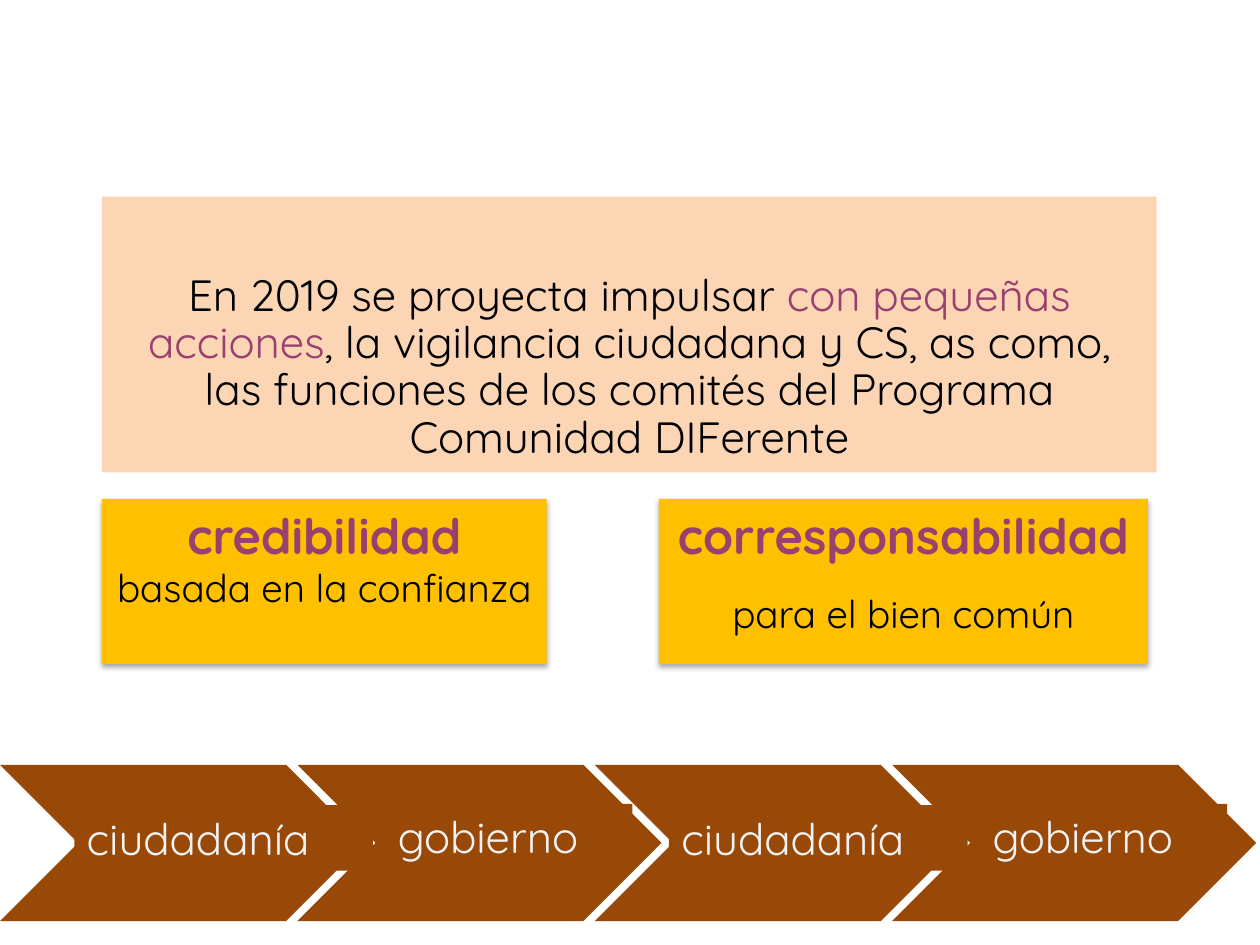
from lxml import etree
from pptx import Presentation
from pptx.dml.color import RGBColor
from pptx.enum.shapes import MSO_SHAPE
from pptx.enum.text import MSO_ANCHOR, PP_ALIGN
from pptx.oxml import parse_xml
from pptx.oxml.ns import nsdecls
from pptx.util import Inches, Pt

RECTANGLE = MSO_SHAPE.RECTANGLE
CHEVRON = MSO_SHAPE.CHEVRON
TOP = MSO_ANCHOR.TOP
BOTTOM = MSO_ANCHOR.BOTTOM
CENTER = PP_ALIGN.CENTER
LEFT = PP_ALIGN.LEFT

PEACH = RGBColor(0xFC, 0xD5, 0xB5)
YELLOW = RGBColor(0xFF, 0xC0, 0x00)
BROWN = RGBColor(0x98, 0x48, 0x07)
PLUM = RGBColor(0x98, 0x40, 0x6E)
BLACK = RGBColor(0x00, 0x00, 0x00)
PALE = RGBColor(0xF2, 0xF2, 0xF2)

FONT = "Quicksand"
CHEVRON_STEP = 2.36


def add_block(slide, preset, left, top, width, height, color):
    shape = slide.shapes.add_shape(
        preset, Inches(left), Inches(top), Inches(width), Inches(height)
    )
    shape.shadow.inherit = False
    shape.fill.solid()
    shape.fill.fore_color.rgb = color
    shape.line.fill.background()
    shape.text_frame.word_wrap = True
    shape.text_frame.vertical_anchor = TOP
    return shape


def add_run(paragraph, text, size, color, bold=False):
    run = paragraph.add_run()
    run.text = text
    run.font.name = FONT
    run.font.size = Pt(size)
    run.font.bold = bold
    run.font.color.rgb = color


def add_soft_shadow(shape):
    effects = shape._element.spPr.find("{*}effectLst")
    shadow = parse_xml(
        f'<a:outerShdw {nsdecls("a")} blurRad="{Pt(3.1)}" dist="{Pt(1.8)}" '
        'dir="5400000" rotWithShape="0"/>'
    )
    color = etree.SubElement(shadow, shadow.tag.replace("outerShdw", "srgbClr"), val="000000")
    etree.SubElement(color, shadow.tag.replace("outerShdw", "alpha"), val="35000")
    effects.append(shadow)


def add_statement(slide):
    panel = add_block(slide, RECTANGLE, 0.81, 1.56, 8.37, 2.19, PEACH)
    panel.text_frame.vertical_anchor = BOTTOM
    panel.text_frame.margin_bottom = Inches(0.08)
    paragraph = panel.text_frame.paragraphs[0]
    paragraph.alignment = CENTER
    paragraph.line_spacing = 0.9
    add_run(paragraph, "En 2019 se proyecta impulsar ", 25, BLACK)
    add_run(paragraph, "con pequeñas acciones", 25, PLUM)
    add_run(
        paragraph,
        ", la vigilancia ciudadana y CS, as como, las funciones de los comités "
        "del Programa Comunidad DIFerente",
        25,
        BLACK,
    )


def add_value_card(slide, left, width, heading, detail, gap):
    card = add_block(slide, RECTANGLE, left, 3.96, width, 1.31, YELLOW)
    add_soft_shadow(card)
    title = card.text_frame.paragraphs[0]
    title.alignment = CENTER
    add_run(title, heading, 28, PLUM, bold=True)
    body = card.text_frame.add_paragraph()
    body.alignment = CENTER
    body.space_before = Pt(gap)
    add_run(body, detail, 22, BLACK)


def add_chevron_step(slide, left, text, label_offset, label_top, label_width):
    add_block(slide, CHEVRON, left, 6.07, 2.89, 1.24, BROWN)
    label = add_block(
        slide, RECTANGLE, left + label_offset, label_top, label_width, 0.52, BROWN
    )
    paragraph = label.text_frame.paragraphs[0]
    paragraph.alignment = LEFT
    add_run(paragraph, text, 25, PALE)


def main():
    presentation = Presentation()
    presentation.slide_width = Inches(10)
    presentation.slide_height = Inches(7.5)
    slide = presentation.slides.add_slide(presentation.slide_layouts[6])

    add_statement(slide)
    add_value_card(slide, 5.23, 3.88, "corresponsabilidad", "para el bien común", 15)
    add_value_card(slide, 0.81, 3.53, "credibilidad", "basada en la confianza", 0)

    citizens = ("ciudadanía", 0.59, 6.39, 2.37)
    government = ("gobierno", 0.7, 6.38, 1.96)
    steps = [citizens, government] * 2
    for index in reversed(range(len(steps))):
        add_chevron_step(slide, index * CHEVRON_STEP, *steps[index])

    presentation.save("out.pptx")


if __name__ == "__main__":
    main()
